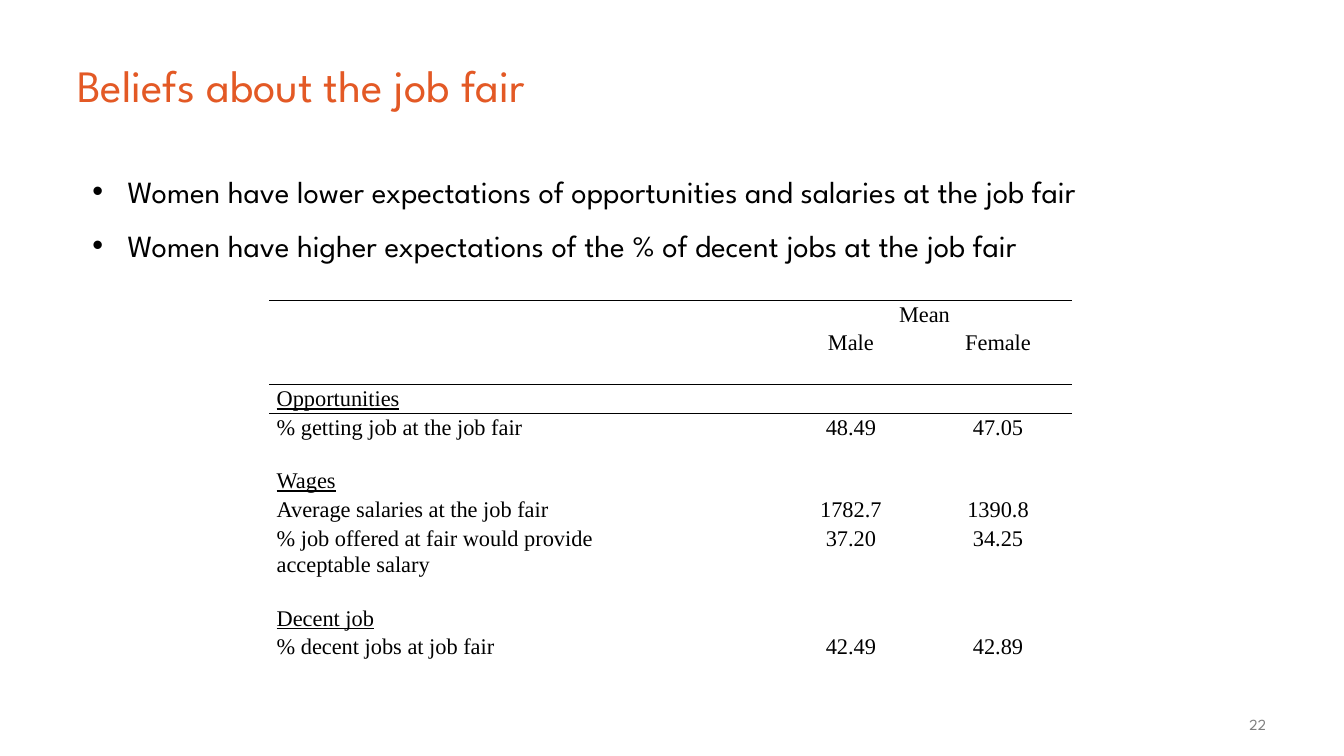
from lxml import etree
from pptx import Presentation
from pptx.dml.color import RGBColor
from pptx.enum.text import MSO_ANCHOR, MSO_AUTO_SIZE, PP_ALIGN
from pptx.oxml.ns import qn
from pptx.util import Pt

LEFT, MID, RIGHT = PP_ALIGN.LEFT, PP_ALIGN.CENTER, PP_ALIGN.RIGHT
TOP, CENTRE = MSO_ANCHOR.TOP, MSO_ANCHOR.MIDDLE
FIXED = MSO_AUTO_SIZE.NONE

BLACK = RGBColor(0x00, 0x00, 0x00)
ORANGE = RGBColor(0xE3, 0x59, 0x25)
GREY = RGBColor(0x7F, 0x7F, 0x7F)
SANS, SERIF = "League Spartan", "Times New Roman"
PLAIN = "{2D5ABB26-0587-4C30-8999-92F81FD0307C}"  # table style without grid

HEAD = {"name": SANS, "size": Pt(32)}
ITEM = {"name": SANS, "size": Pt(22)}
FOOT = {"name": SANS, "size": Pt(11)}
CELL = {"name": SERIF, "size": Pt(16)}

ITEMS = [
    "Women have lower expectations of opportunities and salaries at the job fair",
    "Women have higher expectations of the % of decent jobs at the job fair",
]
ROWS = [
    ("", "Mean", ""),
    ("", "Male", "Female"),
    ("", "", ""),
    ("Opportunities", "", ""),
    ("% getting job at the job fair", "48.49", "47.05"),
    ("Wages", "", ""),
    ("Average salaries at the job fair", "1782.7", "1390.8"),
    ("% job offered at fair would provide\nacceptable salary", "37.20", "34.25"),
    ("Decent job", "", ""),
    ("% decent jobs at job fair", "42.49", "42.89"),
]
GROUPS = ("Opportunities", "Wages", "Decent job")
LINES = {4: 2, 7: 3}  # rows taller than one line
RULES = {0: "a:lnT", 2: "a:lnB", 3: "a:lnT"}
STEP = 19.05


def apply(part, form):
    for key, value in form.items():
        setattr(part, key, value)


def place(shape, box):
    sides = ("left", "top", "width", "height")
    apply(shape, dict(zip(sides, map(Pt, box))))


def write(frame, lines, font, color, para, pad):
    """Fill a text frame; pad holds the side and the end margins."""
    side, end = map(Pt, pad)
    apply(frame, {"margin_left": side, "margin_right": side,
                  "margin_top": end, "margin_bottom": end})
    frame.text = "\n".join(lines)
    for line in frame.paragraphs:
        apply(line, para)
        for run in line.runs:
            apply(run.font, font)
            run.font.color.rgb = color


def add_title(slide, box):
    shape = slide.shapes.title
    place(shape, box)
    frame = shape.text_frame
    apply(frame, {"word_wrap": True, "auto_size": FIXED,
                  "vertical_anchor": CENTRE})
    write(frame, ["Beliefs about the job fair"], HEAD, ORANGE,
          {"alignment": LEFT}, (7.2, 7.2))


def add_list(slide, box):
    shape = slide.placeholders[1]
    place(shape, box)
    frame = shape.text_frame
    apply(frame, {"word_wrap": True, "auto_size": FIXED,
                  "vertical_anchor": TOP})
    write(frame, ITEMS, ITEM, BLACK,
          {"alignment": LEFT, "space_before": Pt(4.4), "space_after": Pt(8)},
          (7.2, 7.2))
    # Bullets with a hanging indent
    for line in frame.paragraphs:
        prop = line._p.get_or_add_pPr()
        prop.set("marL", str(Pt(36)))
        prop.set("indent", str(Pt(-25.2)))
        etree.SubElement(prop, qn("a:buChar")).set("char", "•")


def add_rule(cell, side):
    line = etree.Element(qn(side), w=str(Pt(1)))
    fill = etree.SubElement(line, qn("a:solidFill"))
    etree.SubElement(fill, qn("a:srgbClr"), val=str(BLACK))
    cell._tc.get_or_add_tcPr().insert(0, line)


def add_means(slide, box):
    left, top, width, wide = box
    high = STEP * (len(ROWS) + sum(n - 1 for n in LINES.values()))
    shape = slide.shapes.add_table(len(ROWS), 3, *map(Pt, (left, top, width, high)))
    table = shape.table
    apply(table, {"first_row": False, "horz_banding": False})
    table._tbl.tblPr.find(qn("a:tableStyleId")).text = PLAIN
    slim = (width - wide) / 2
    for col, size in zip(table.columns, (wide, slim, slim)):
        col.width = Pt(size)
    table.cell(0, 1).merge(table.cell(0, 2))

    for r, row in enumerate(ROWS):
        table.rows[r].height = Pt(STEP * LINES.get(r, 1))
        for c, text in enumerate(row):
            cell = table.cell(r, c)
            cell.fill.background()
            font = {**CELL, "underline": text in GROUPS}
            para = {"alignment": MID if c else LEFT, "line_spacing": 1.07}
            write(cell.text_frame, text.split("\n"), font, BLACK, para, (5.4, 0))
            apply(cell, {"margin_left": Pt(5.4), "margin_right": Pt(5.4),
                         "margin_top": 0, "margin_bottom": 0,
                         "vertical_anchor": TOP})
            if not text:  # keeps an empty row from growing
                end = cell.text_frame.paragraphs[0]._p.get_or_add_endParaRPr()
                end.set("sz", "1600")
            if r in RULES:
                add_rule(cell, RULES[r])


def add_number(slide, box):
    frame = slide.shapes.add_textbox(*map(Pt, box)).text_frame
    frame.word_wrap = True
    write(frame, ["22"], FOOT, GREY, {"alignment": RIGHT}, (7.2, 3.6))


def main():
    deck = Presentation()
    apply(deck, {"slide_width": Pt(960), "slide_height": Pt(540)})
    slide = deck.slides.add_slide(deck.slide_layouts[1])
    add_list(slide, (48, 116, 864, 371))
    add_title(slide, (48, 15, 864, 91.5))
    add_number(slide, (822, 507.5, 89.5, 17.5))
    add_means(slide, (192.25, 214.5, 573.25, 363))
    deck.save("out.pptx")


if __name__ == "__main__":
    main()
